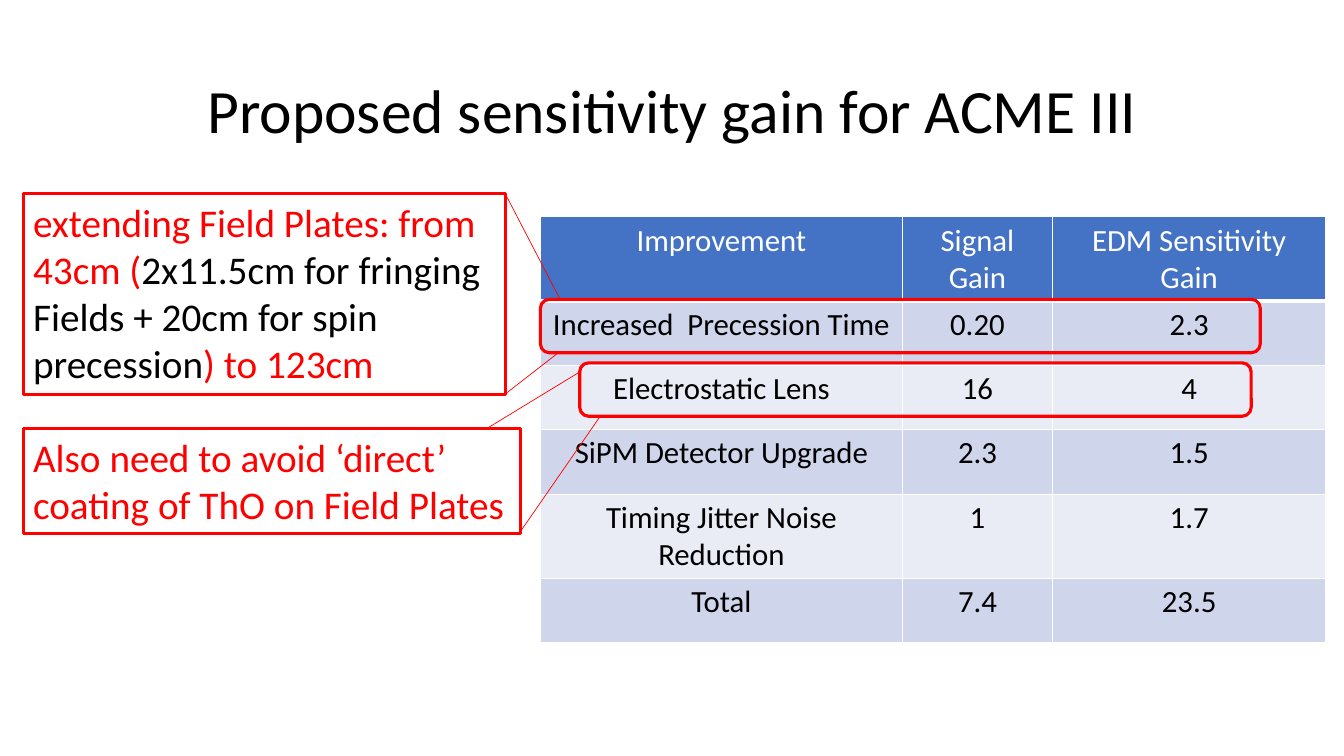
from dataclasses import dataclass
from typing import Any

from lxml.etree import SubElement
from pptx import Presentation
from pptx.dml.color import RGBColor
from pptx.enum.shapes import MSO_CONNECTOR as Connector, MSO_SHAPE as Preset
from pptx.enum.text import MSO_ANCHOR as Anchor, MSO_AUTO_SIZE as AutoSize, PP_ALIGN as Align
from pptx.oxml.ns import qn
from pptx.oxml.xmlchemy import OxmlElement
from pptx.util import Inches, Pt

RED, BLACK, WHITE, BLUE = "FF0000", "000000", "FFFFFF", "4472C4"
BANDS = ("E9EBF5", "CFD5EA")
Point = tuple[float, float]
Box = tuple[float, float, float, float]
Line = list[tuple[str, str]]


@dataclass
class Callout:
    box: Box
    lines: list[Line]
    highlight: Box
    leaders: list[tuple[Point, Point]]


COLUMN_WIDTHS = (3.59, 1.49, 2.71)
ROW_HEIGHT = 0.64
GAINS = [
    ("Improvement", "Signal Gain", "EDM Sensitivity Gain"),
    ("Increased  Precession Time", "0.20", "2.3"),
    ("Electrostatic Lens", "16", "4"),
    ("SiPM Detector Upgrade", "2.3", "1.5"),
    ("Timing Jitter Noise Reduction", "1", "1.7"),
    ("Total", "7.4", "23.5"),
]
CALLOUTS = [
    Callout(
        (0.23, 1.92, 4.78, 1.99),
        [
            [("extending Field Plates: from", RED)],
            [("43cm (", RED), ("2x11.5cm for fringing", BLACK)],
            [("Fields + 20cm for spin", BLACK)],
            [("precession", BLACK), (") to 123cm", RED)],
        ],
        (5.36, 2.97, 7.14, 0.53),
        [((5.01, 1.92), (5.55, 2.96)), ((5.01, 3.91), (5.55, 3.49))],
    ),
    Callout(
        (0.23, 4.25, 4.93, 1.04),
        [
            [("Also need to avoid ‘direct’", RED)],
            [("coating of ThO on Field Plates", RED)],
        ],
        (5.75, 3.6, 6.66, 0.53),
        [((4.83, 4.25), (5.75, 3.69)), ((5.15, 5.29), (5.96, 4.12))],
    ),
]


def color(value: str) -> RGBColor:
    return RGBColor.from_string(value)


def apply(target: Any, values: dict[str, Any]) -> None:
    for name, value in values.items():
        setattr(target, name, value)


def write(frame: Any, lines: list[Line], size: float, paragraph_format: dict[str, Any]) -> None:
    for index, line in enumerate(lines):
        paragraph = frame.add_paragraph() if index else frame.paragraphs[0]
        apply(paragraph, paragraph_format)
        for text, text_color in line:
            run = paragraph.add_run()
            run.text = text
            apply(run.font, {"name": "Calibri", "size": Pt(size), "bold": False})
            run.font.color.rgb = color(text_color)


def stroke(shape: Any, width: float) -> None:
    shape.line.color.rgb = color(RED)
    shape.line.width = Pt(width)


def add_outline(slide: Any, preset: Preset, box: Box) -> Any:
    shape = slide.shapes.add_shape(preset, *map(Inches, box))
    shape.shadow.inherit = False
    shape.fill.background()
    stroke(shape, 2.25)
    return shape


def add_leader(slide: Any, start: Point, end: Point) -> None:
    leader = slide.shapes.add_connector(Connector.STRAIGHT, *map(Inches, start + end))
    stroke(leader, 0.5)
    SubElement(leader._element.spPr, qn("a:effectLst"))


def add_callout(slide: Any, callout: Callout) -> None:
    shape = add_outline(slide, Preset.RECTANGLE, callout.box)
    frame = shape.text_frame
    apply(frame, {
        "word_wrap": False,
        "auto_size": AutoSize.SHAPE_TO_FIT_TEXT,
        "vertical_anchor": Anchor.TOP,
    })
    write(frame, callout.lines, 28, {"alignment": Align.LEFT})
    add_outline(slide, Preset.ROUNDED_RECTANGLE, callout.highlight)
    for start, end in callout.leaders:
        add_leader(slide, start, end)


def add_borders(cell: Any, bottom_width: float) -> None:
    properties = cell._tc.get_or_add_tcPr()
    widths = {"a:lnL": 1, "a:lnR": 1, "a:lnT": 1, "a:lnB": bottom_width}
    for index, (tag, width) in enumerate(widths.items()):
        border = OxmlElement(tag)
        border.set("w", str(Pt(width)))
        fill = SubElement(border, qn("a:solidFill"))
        SubElement(fill, qn("a:srgbClr")).set("val", WHITE)
        properties.insert(index, border)


def add_gain_table(slide: Any) -> None:
    box = (5.36, 2.15, sum(COLUMN_WIDTHS), ROW_HEIGHT * len(GAINS))
    table = slide.shapes.add_table(len(GAINS), len(COLUMN_WIDTHS), *map(Inches, box)).table
    for column, width in zip(table.columns, COLUMN_WIDTHS):
        column.width = Inches(width)
    for row_index, values in enumerate(GAINS):
        header = row_index == 0
        table.rows[row_index].height = Inches(ROW_HEIGHT)
        for column_index, value in enumerate(values):
            cell = table.cell(row_index, column_index)
            cell.fill.solid()
            cell.fill.fore_color.rgb = color(BLUE if header else BANDS[row_index % 2])
            add_borders(cell, 3 if header else 1)
            text_color = WHITE if header else BLACK
            write(cell.text_frame, [[(value, text_color)]], 22, {"alignment": Align.CENTER})


def add_title(slide: Any, text: str) -> None:
    frame = slide.shapes.add_textbox(*map(Inches, (0.92, 0.4, 11.5, 1.45))).text_frame
    apply(frame, {"word_wrap": True, "vertical_anchor": Anchor.MIDDLE})
    write(frame, [[(text, BLACK)]], 44, {"alignment": Align.CENTER, "line_spacing": 0.9})


def main() -> None:
    presentation = Presentation()
    apply(presentation, {"slide_width": Inches(13.33), "slide_height": Inches(7.5)})
    slide = presentation.slides.add_slide(presentation.slide_layouts[6])
    add_title(slide, "Proposed sensitivity gain for ACME III")
    add_gain_table(slide)
    for callout in CALLOUTS:
        add_callout(slide, callout)
    presentation.save("out.pptx")


if __name__ == "__main__":
    main()
